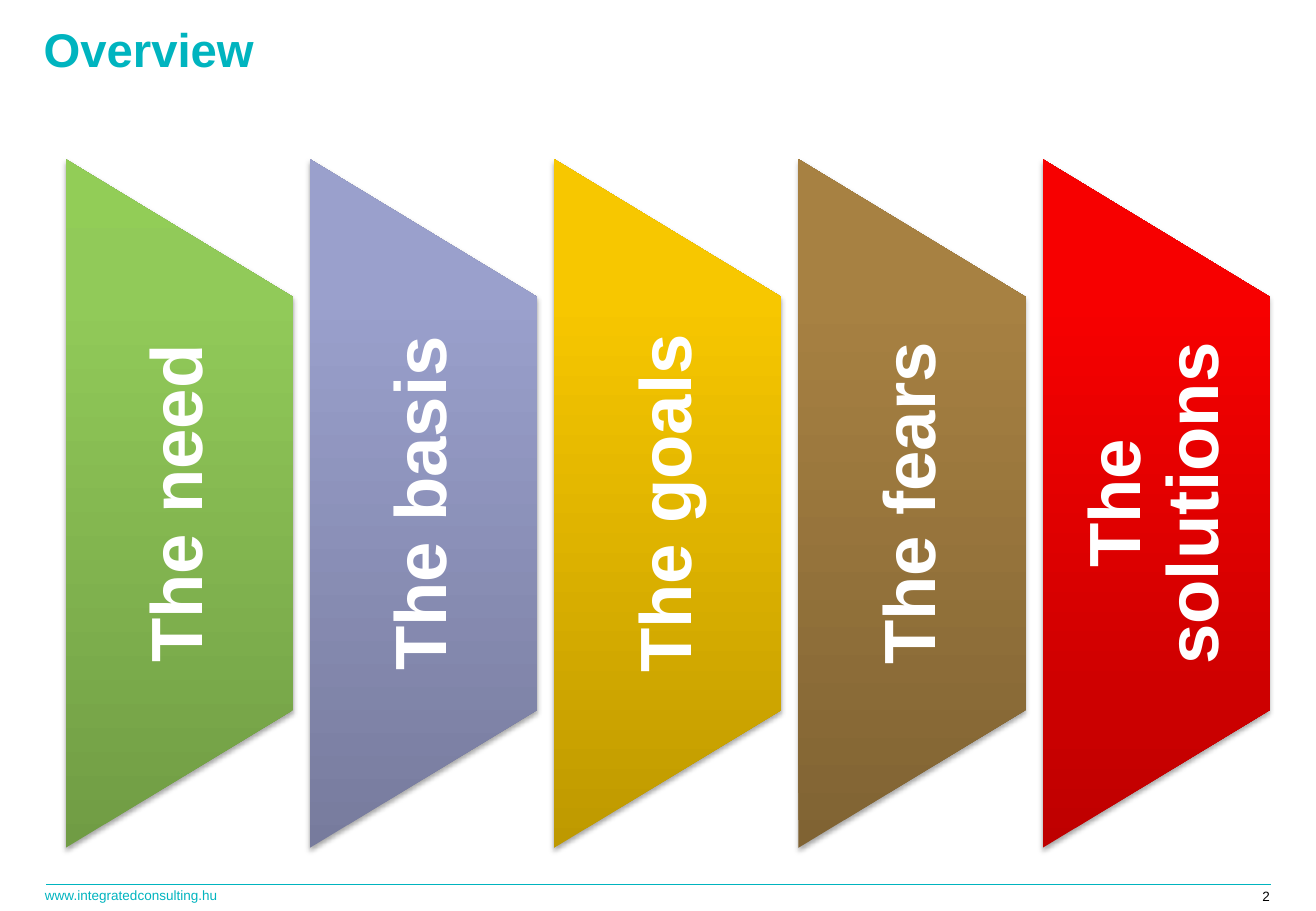
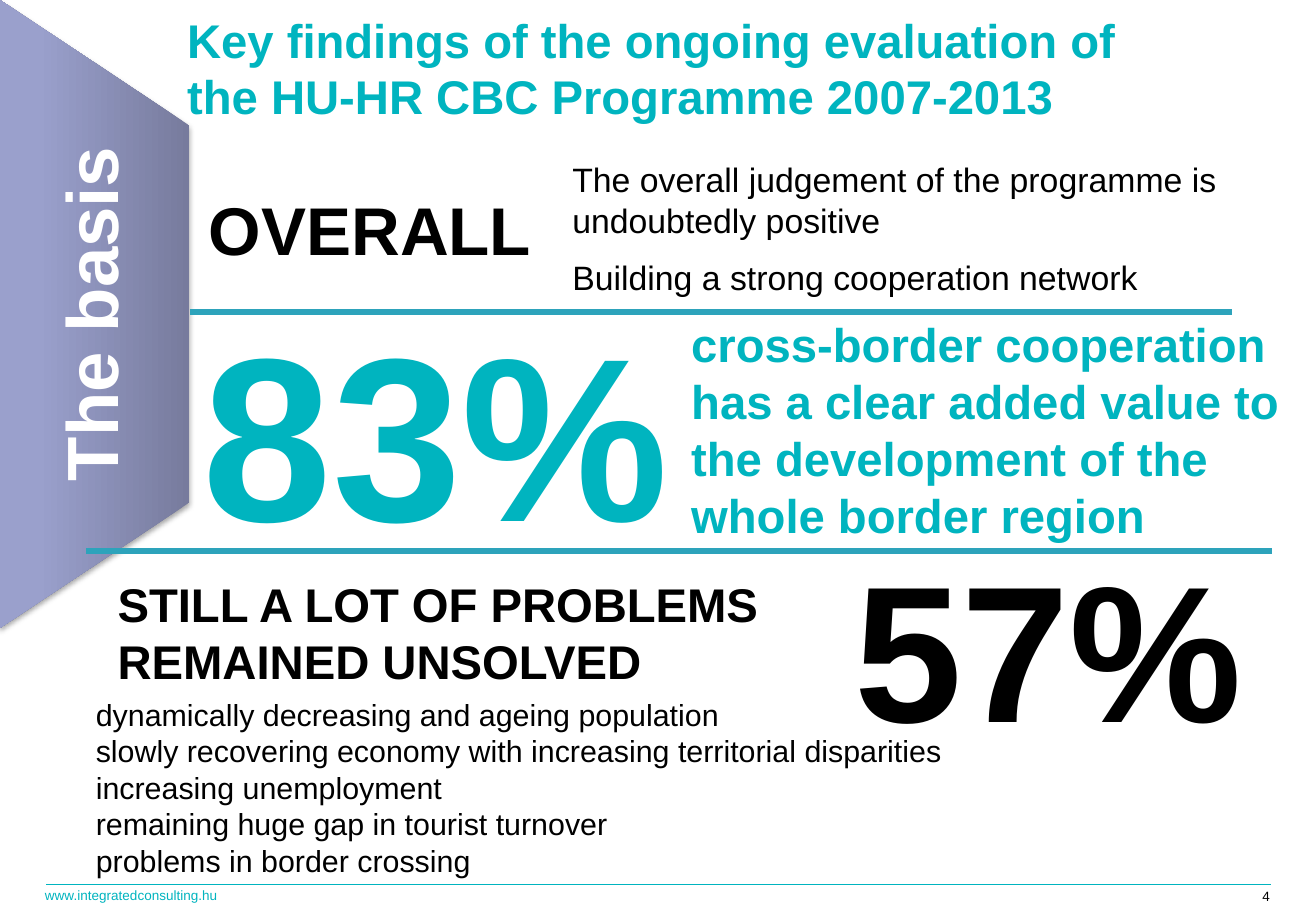
import lxml.etree
import pptx
import pptx.dml.color
import pptx.enum.shapes
import pptx.enum.text
import pptx.oxml
import pptx.oxml.ns
import pptx.util

Inches, Pt = pptx.util.Inches, pptx.util.Pt
ALIGN = pptx.enum.text.PP_ALIGN
SHAPE = pptx.enum.shapes.MSO_SHAPE
qn = pptx.oxml.ns.qn
NS = pptx.oxml.ns.nsdecls("a")

TEAL, RULE, BLACK, WHITE = "00B4BF", "2DA3BB", "000000", "FFFFFF"
LAVENDER = ["777B9D", "9AA0CC", "9AA0CE"]
SHADOW = (f'<a:effectLst {NS}><a:outerShdw blurRad="39370" dist="22860" dir="5400000" '
          'rotWithShape="0"><a:srgbClr val="000000"><a:alpha val="35000"/></a:srgbClr>'
          '</a:outerShdw></a:effectLst>')


def rgb(value):
    return pptx.dml.color.RGBColor.from_string(value)


def add_text(s, box, lines, size, color=BLACK, bold=False, inset=(0, 0), align=ALIGN.LEFT,
             spacing=1.0, before=0):
    """Add a text box with one paragraph per line; inset is (horizontal, vertical)."""
    sp = s.shapes.add_textbox(*map(Inches, box))
    tf = sp.text_frame
    tf.word_wrap = True
    tf.margin_left = tf.margin_right = Inches(inset[0])
    tf.margin_top = tf.margin_bottom = Inches(inset[1])
    tf.text = "\n".join(lines)
    for i, p in enumerate(tf.paragraphs):
        p.alignment, p.line_spacing = align, spacing
        if i and before:
            p.space_before = Pt(before)
        for r in p.runs:
            r.font.name, r.font.size, r.font.bold = "Arial", Pt(size), bold
            r.font.color.rgb = rgb(color)
    return sp


prs = pptx.Presentation()
prs.slide_width, prs.slide_height = Inches(10.83), Inches(7.5)
overview, findings = [prs.slides.add_slide(prs.slide_layouts[6]) for _ in range(2)]

# Titles and footers
for s, number, title, left, top in [
    (overview, "2", "Overview", 0.36, 0.17),
    (findings, "4", "Key findings of the ongoing evaluation of the HU-HR CBC Programme 2007-2013",
     1.54, 0.09),
]:
    add_text(s, (left, top, 8.05, 1.06), [title], 28, TEAL, True)
    add_text(s, (0.37, 7.32, 2.25, 0.11), ["www.integratedconsulting.hu"], 8, TEAL, spacing=0.9)
    add_text(s, (9.79, 7.33, 0.66, 0.12), [number], 8, align=ALIGN.RIGHT, spacing=0.9)

# Texts of the findings
pad = (0.1, 0.05)
add_text(findings, (4.71, 1.31, 5.91, 1.34),
         ["The overall judgement of the programme is undoubtedly positive",
          "Building a strong cooperation network"], 20, before=10)
add_text(findings, (5.59, 2.55, 5.42, 1.99),
         ["cross-border cooperation has a clear added value to the development of the whole "
          "border region"], 28, TEAL, True, pad)
add_text(findings, (1.57, 2.33, 5.42, 2.42), ["83%"], 138, TEAL, True, pad)
add_text(findings, (1.72, 1.55, 2.9, 0.8), ["OVERALL"], 40, bold=True)
add_text(findings, (0.87, 4.69, 6.06, 1.04), ["STILL A LOT OF PROBLEMS REMAINED UNSOLVED"], 28,
         bold=True, inset=pad)
add_text(findings, (6.93, 4.3, 3.9, 2.04), ["57%"], 115, bold=True, inset=pad)
add_text(findings, (0.69, 5.68, 7.48, 1.62),
         ["dynamically decreasing and ageing population",
          "slowly recovering economy with increasing territorial disparities",
          "increasing unemployment",
          "remaining huge gap in tourist turnover",
          "problems in border crossing"], 18, inset=pad)

# Banners: slide, left, top, width, height, label, gradient colours, gradient angle
sections = [
    ("The need", ["709C44", "91CA59", "92CD57"]),
    ("The basis", LAVENDER),
    ("The goals", ["BE9900", "F7C700", "F8C800"]),
    ("The fears", ["806333", "A78142", "A98240"]),
    ("The solutions", ["BE0000", "F70000", "F80000"]),
]
banners = [(overview, 0.54 + 2.01 * i, 1.31, 1.87, 5.67, label, colors, 0)
           for i, (label, colors) in enumerate(sections)]
banners.append((findings, 0, 0, 1.56, 5.17, "The basis", LAVENDER, 270))

for s, left, top, width, height, label, colors, angle in banners:
    # The shape lies on its side before it is turned about its centre
    sp = s.shapes.add_shape(SHAPE.FLOWCHART_MANUAL_OPERATION,
                            Inches(left + (width - height) / 2),
                            Inches(top + (height - width) / 2), Inches(height), Inches(width))
    sp.rotation = 270
    sp.line.fill.background()
    stops = "".join(f'<a:gs pos="{pos}000"><a:srgbClr val="{color}"/></a:gs>'
                    for pos, color in zip((0, 80, 100), colors))
    gradient = pptx.oxml.parse_xml(
        f'<a:gradFill {NS} rotWithShape="1"><a:gsLst>{stops}</a:gsLst>'
        f'<a:lin ang="{angle * 60000}" scaled="0"/></a:gradFill>')
    sp.element.spPr.find(qn("a:prstGeom")).addnext(gradient)
    sp.element.spPr.append(pptx.oxml.parse_xml(SHADOW))

    tx = add_text(s, (left, top + height * 0.2, width, height * 0.6), [label], 43, WHITE, True,
                  (0.3, 0), ALIGN.CENTER, 0.9)
    tx.text_frame.vertical_anchor = pptx.enum.text.MSO_ANCHOR.MIDDLE
    tx.text_frame._txBody.bodyPr.set("vert", "vert270")

# Footer lines and section rules; the upper rule starts at the banner's edge
for s, x1, x2, y, color, width in [
    (overview, 0.38, 10.46, 7.28, TEAL, 0.5),
    (findings, 0.38, 10.46, 7.28, TEAL, 0.5),
    (findings, 1.56, 10.14, 2.57, RULE, 3.5),
    (findings, 0.71, 10.47, 4.54, RULE, 3.5),
]:
    line = s.shapes.add_connector(pptx.enum.shapes.MSO_CONNECTOR.STRAIGHT,
                                  Inches(x1), Inches(y), Inches(x2), Inches(y))
    line.line.color.rgb, line.line.width = rgb(color), Pt(width)
    lxml.etree.SubElement(line.element.spPr, qn("a:effectLst"))

prs.save("out.pptx")
